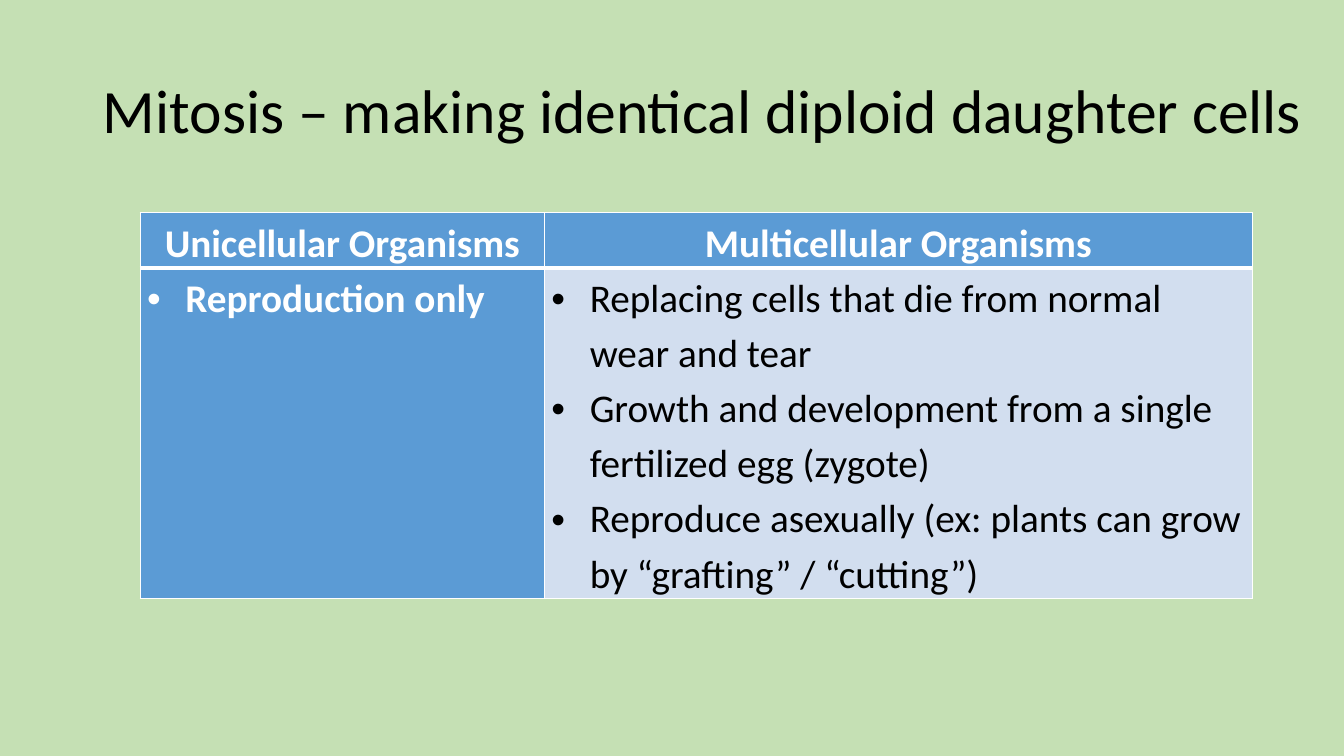
"""Build a slide comparing the uses of mitosis in two kinds of organisms."""
import lxml.etree
import pptx
import pptx.dml.color
import pptx.enum.text
import pptx.oxml.ns
import pptx.util

Inches = pptx.util.Inches
Pt = pptx.util.Pt
ALIGN = pptx.enum.text.PP_ALIGN
ANCHOR = pptx.enum.text.MSO_ANCHOR
qn = pptx.oxml.ns.qn


def colour(hex_string):
    return pptx.dml.color.RGBColor.from_string(hex_string)


def write(para, text, size=28, color="000000", bold=False, align=ALIGN.LEFT, spacing=1.15, bullet=False):
    para.alignment = align
    para.line_spacing = spacing
    span = para.add_run()
    span.text = text
    span.font.name = "Calibri"
    span.font.size = Pt(size)
    span.font.bold = bold
    span.font.color.rgb = colour(color)
    if bullet:
        properties = para._p.get_or_add_pPr()
        properties.set("marL", str(Inches(0.38)))
        properties.set("indent", str(-Inches(0.38)))
        lxml.etree.SubElement(properties, qn("a:buFont"), typeface="Arial")
        lxml.etree.SubElement(properties, qn("a:buChar"), char="•")


deck = pptx.Presentation()
deck.slide_width = Inches(13.33)
deck.slide_height = Inches(7.5)
page = deck.slides.add_slide(deck.slide_layouts[5])
page.background.fill.solid()
page.background.fill.fore_color.rgb = colour("C5E0B4")

title = page.shapes.title
title.left, title.top = Inches(0.92), Inches(0.4)
title.width, title.height = Inches(12.14), Inches(1.45)
title.text_frame.word_wrap = True
title.text_frame.auto_size = pptx.enum.text.MSO_AUTO_SIZE.NONE
title.text_frame.vertical_anchor = ANCHOR.MIDDLE
write(title.text_frame.paragraphs[0], "Mitosis – making identical diploid daughter cells", size=44, spacing=0.9)

contents = [
    [["Unicellular Organisms"], ["Multicellular Organisms"]],
    [["Reproduction only"],
     ["Replacing cells that die from normal wear and tear",
      "Growth and development from a single fertilized egg (zygote)",
      "Reproduce asexually (ex: plants can grow by “grafting” / “cutting”)"]],
]
table = page.shapes.add_table(2, 2, Inches(1.39), Inches(2.11), Inches(11.03), Inches(3.83)).table
for column, width in zip(table.columns, [4.01, 7.02]):
    column.width = Inches(width)
for row, height in zip(table.rows, [0.55, 3.28]):
    row.height = Inches(height)

for row_index, row_contents in enumerate(contents):
    for column_index, lines in enumerate(row_contents):
        is_header = row_index == 0
        is_plain = row_index == 1 and column_index == 1
        cell = table.cell(row_index, column_index)
        cell.margin_left = cell.margin_right = Inches(0.07)
        cell.margin_top = cell.margin_bottom = 0
        cell.vertical_anchor = ANCHOR.TOP

        cell_properties = cell._tc.get_or_add_tcPr()
        thick_side = "B" if is_header else "T"
        for side in "LRTB":
            weight = 3 if side == thick_side else 1
            border = lxml.etree.SubElement(cell_properties, qn(f"a:ln{side}"), w=str(Pt(weight)))
            paint = lxml.etree.SubElement(border, qn("a:solidFill"))
            lxml.etree.SubElement(paint, qn("a:srgbClr"), val="FFFFFF")
        cell.fill.solid()
        cell.fill.fore_color.rgb = colour("D2DEEF" if is_plain else "5B9BD5")

        for line_index, line in enumerate(lines):
            frame = cell.text_frame
            para = frame.add_paragraph() if line_index else frame.paragraphs[0]
            write(para, line, color="000000" if is_plain else "FFFFFF", bold=not is_plain,
                  align=ALIGN.CENTER if is_header else ALIGN.LEFT, bullet=not is_header)

deck.save("out.pptx")
